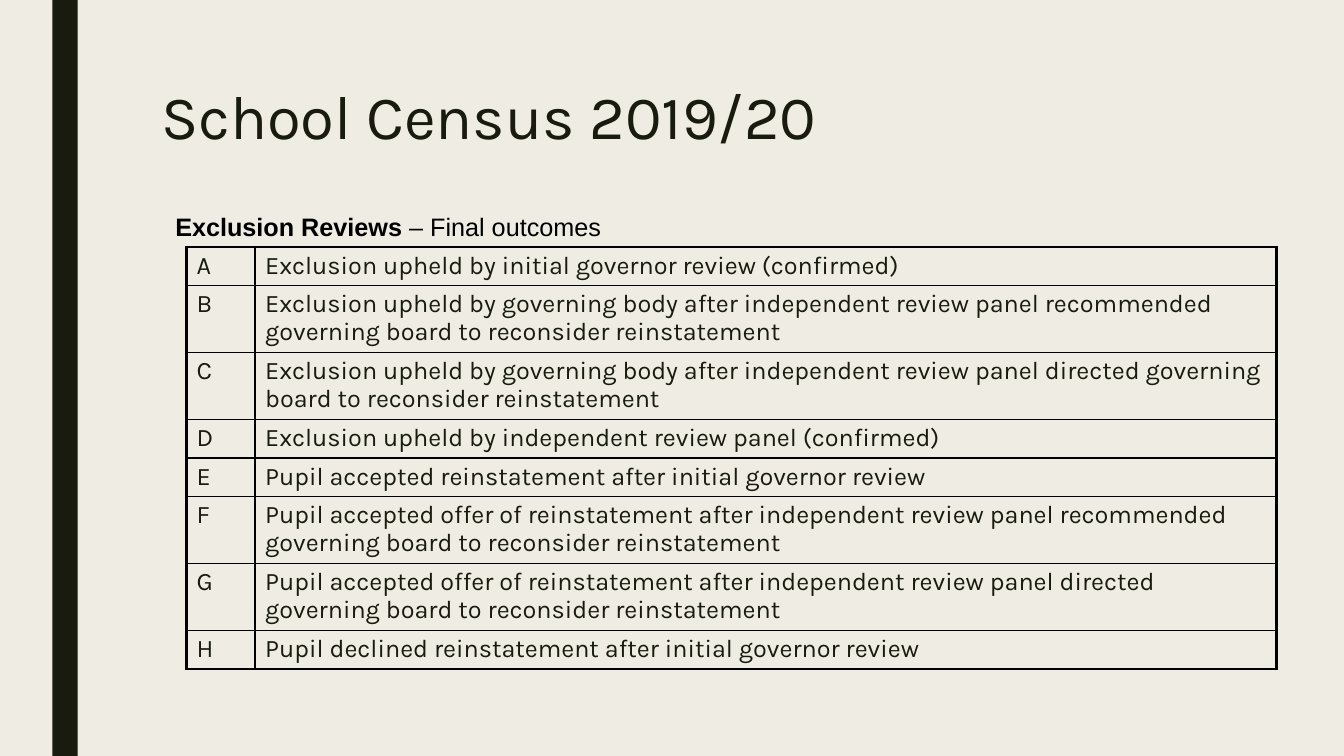
"""Build the School Census slide with its table of exclusion review outcomes."""
from dataclasses import dataclass

from lxml.etree import SubElement
from pptx import Presentation
from pptx.dml.color import RGBColor
from pptx.enum.shapes import MSO_SHAPE as Preset
from pptx.enum.text import MSO_ANCHOR as Anchor
from pptx.oxml.ns import qn
from pptx.slide import Slide
from pptx.table import _Cell as Cell
from pptx.text.text import TextFrame
from pptx.util import Inches, Pt

CREAM = RGBColor(0xEF, 0xED, 0xE3)
DARK = RGBColor(0x19, 0x1B, 0x0E)
BLACK = RGBColor(0, 0, 0)
THICK, THIN = Pt(2.25), Pt(1)
COLUMN_WIDTHS = (0.68, 10.13)
LINE_HEIGHT, CELL_PADDING = 0.275, 0.1


@dataclass(frozen=True)
class Outcome:
    code: str
    meaning: str
    lines: int = 1


OUTCOMES = (
    Outcome("A", "Exclusion upheld by initial governor review (confirmed)"),
    Outcome("B", "Exclusion upheld by governing body after independent review panel recommended "
                 "governing board to reconsider reinstatement", 2),
    Outcome("C", "Exclusion upheld by governing body after independent review panel directed "
                 "governing board to reconsider reinstatement", 2),
    Outcome("D", "Exclusion upheld by independent review panel (confirmed)"),
    Outcome("E", "Pupil accepted reinstatement after initial governor review"),
    Outcome("F", "Pupil accepted offer of reinstatement after independent review panel "
                 "recommended governing board to reconsider reinstatement", 2),
    Outcome("G", "Pupil accepted offer of reinstatement after independent review panel directed "
                 "governing board to reconsider reinstatement", 2),
    Outcome("H", "Pupil declined reinstatement after initial governor review"),
)


def add_text_box(slide: Slide, left: float, top: float, width: float, height: float) -> TextFrame:
    box = slide.shapes.add_textbox(Inches(left), Inches(top), Inches(width), Inches(height))
    box.text_frame.word_wrap = True
    return box.text_frame


def add_side_bar(slide: Slide) -> None:
    bar = slide.shapes.add_shape(Preset.RECTANGLE, Inches(0.52), 0, Inches(0.25), Inches(7.5))
    bar.shadow.inherit = False
    bar.fill.solid()
    bar.fill.fore_color.rgb = DARK
    bar.line.fill.background()


def add_title(slide: Slide) -> None:
    frame = add_text_box(slide, 1.5, 0.75, 10.5, 0.88)
    frame.vertical_anchor = Anchor.MIDDLE
    paragraph = frame.paragraphs[0]
    paragraph.text = "School Census 2019/20"
    paragraph.line_spacing = 0.89
    paragraph.font.name = "Karla"
    paragraph.font.size = Pt(44)
    paragraph.font.color.rgb = DARK


def add_subtitle(slide: Slide) -> None:
    paragraph = add_text_box(slide, 1.64, 2.05, 5.97, 0.4).paragraphs[0]
    paragraph.font.name = "Arial"
    paragraph.font.size = Pt(18)
    paragraph.font.color.rgb = BLACK
    for text, bold in (("Exclusion Reviews", True), (" – Final outcomes", False)):
        run = paragraph.add_run()
        run.text = text
        run.font.bold = bold


def set_borders(cell: Cell, widths: dict[str, int]) -> None:
    properties = cell._tc.get_or_add_tcPr()
    for side, width in widths.items():
        line = SubElement(properties, qn(f"a:ln{side}"), w=str(width))
        SubElement(SubElement(line, qn("a:solidFill")), qn("a:srgbClr"), val=str(BLACK))


def fill_cell(cell: Cell, text: str) -> None:
    cell.fill.background()
    paragraph = cell.text_frame.paragraphs[0]
    paragraph.text = text
    paragraph.line_spacing = 0.94
    paragraph.space_before = Pt(10)
    paragraph.space_after = Pt(2)
    paragraph.font.name = "Karla"
    paragraph.font.size = Pt(18)
    paragraph.font.color.rgb = DARK


def add_outcome_table(slide: Slide) -> None:
    heights = [Inches(CELL_PADDING + LINE_HEIGHT * outcome.lines) for outcome in OUTCOMES]
    table = slide.shapes.add_table(
        len(OUTCOMES), len(COLUMN_WIDTHS), Inches(1.85), Inches(2.45),
        Inches(sum(COLUMN_WIDTHS)), sum(heights)).table
    table.first_row = table.horz_banding = False
    for column, width in zip(table.columns, COLUMN_WIDTHS):
        column.width = Inches(width)
    last_row, last_column = len(OUTCOMES) - 1, len(COLUMN_WIDTHS) - 1
    for i, outcome in enumerate(OUTCOMES):
        table.rows[i].height = heights[i]
        for j, text in enumerate((outcome.code, outcome.meaning)):
            cell = table.cell(i, j)
            set_borders(cell, {
                "L": THICK if j == 0 else THIN,
                "R": THICK if j == last_column else THIN,
                "T": THICK if i == 0 else THIN,
                "B": THICK if i == last_row else THIN,
            })
            fill_cell(cell, text)


def main() -> None:
    presentation = Presentation()
    presentation.slide_width = Inches(13.33)
    presentation.slide_height = Inches(7.5)
    slide = presentation.slides.add_slide(presentation.slide_layouts[6])
    slide.background.fill.solid()
    slide.background.fill.fore_color.rgb = CREAM
    add_side_bar(slide)
    add_title(slide)
    add_outcome_table(slide)
    add_subtitle(slide)
    presentation.save("out.pptx")


if __name__ == "__main__":
    main()
